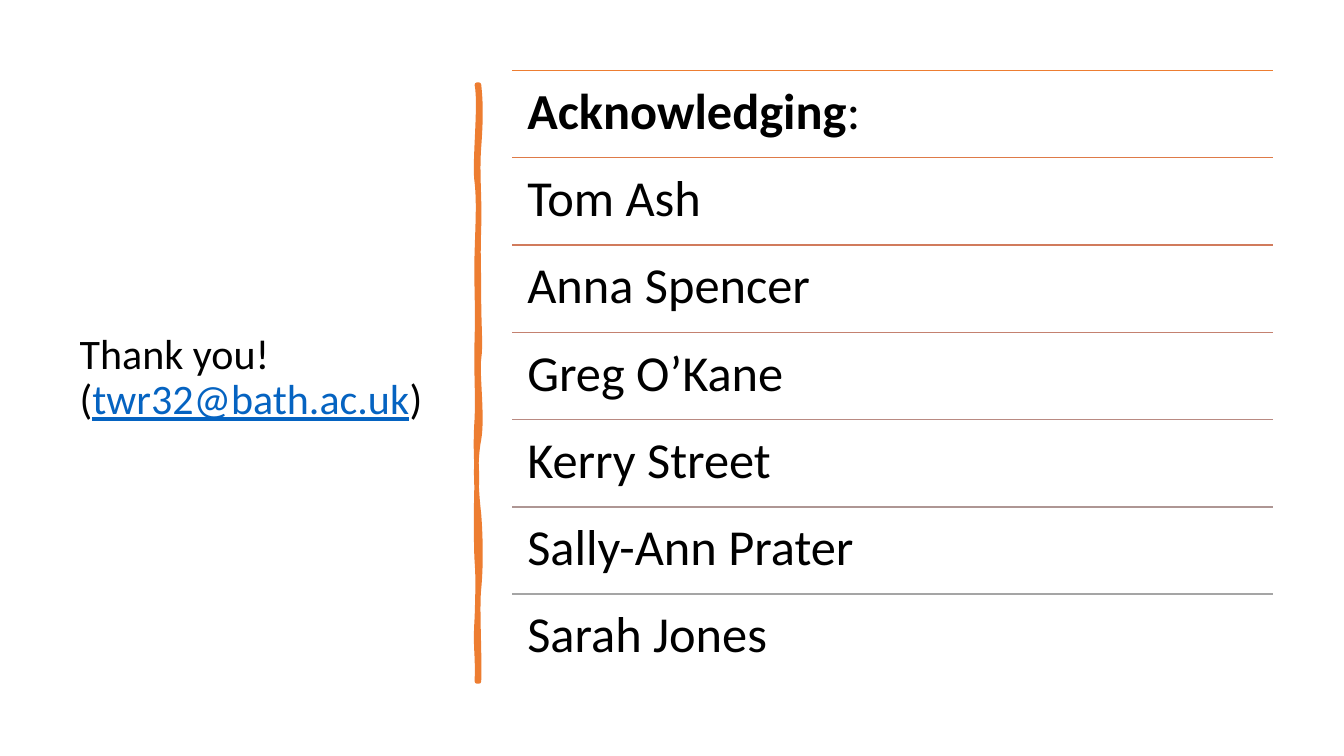
from lxml.etree import SubElement
from pptx import Presentation
from pptx.dml.color import RGBColor
from pptx.enum.shapes import MSO_CONNECTOR
from pptx.enum.text import MSO_ANCHOR, MSO_AUTO_SIZE, PP_ALIGN
from pptx.oxml.ns import qn
from pptx.util import Inches, Pt

COLORS = {"text": "000000", "link": "0563C1", "accent": "ED7D31"}
ROWS = [
    ("ED7D31", [("Acknowledging", True), (":", False)]),
    ("DE7A47", [("Tom Ash", False)]),
    ("D17B5C", [("Anna Spencer", False)]),
    ("C48170", [("Greg O’Kane", False)]),
    ("B98A82", [("Kerry Street", False)]),
    ("AE9694", [("Sally-Ann Prater", False)]),
    ("A5A5A5", [("Sarah Jones", False)]),
]
EDGE_CURVES = [
    [(4, 18), (4, 35), (2, 62)],
    [(0, 89), (3, 111), (2, 142)],
    [(1, 173), (2, 178), (2, 210)],
    [(2, 241), (4, 258), (2, 272)],
    [(0, 286), (6, 330), (2, 352)],
    [(-2, 373), (-1, 400), (2, 426)],
    [(4, 452), (4, 480), (2, 500)],
    [(0, 519), (3, 566), (2, 592)],
    [(1, 592), (0, 592), (0, 592)],
    [(1, 562), (-2, 560), (0, 529)],
    [(1, 499), (1, 486), (0, 473)],
    [(-1, 460), (-1, 411), (0, 393)],
    [(0, 375), (-2, 361), (0, 331)],
    [(1, 302), (-1, 289), (0, 251)],
    [(1, 214), (-1, 197), (0, 166)],
    [(1, 134), (2, 116), (0, 97)],
    [(-3, 79), (4, 20), (0, 0)],
    [(1, 0), (1, 0), (2, 0)],
]
BODY_CURVES = [
    [(2, 31), (-1, 41), (2, 68)],
    [(4, 95), (1, 113), (2, 124)],
    [(3, 136), (1, 171), (2, 210)],
    [(3, 249), (0, 259), (2, 278)],
    [(4, 297), (4, 313), (2, 346)],
    [(-1, 379), (2, 390), (2, 432)],
    [(2, 473), (1, 469), (2, 494)],
    [(3, 519), (1, 563), (2, 592)],
    [(1, 591), (0, 591), (0, 592)],
    [(-3, 565), (1, 548), (0, 529)],
    [(-1, 511), (2, 485), (0, 455)],
    [(-2, 426), (3, 416), (0, 387)],
    [(-3, 358), (4, 336), (0, 302)],
    [(-4, 267), (1, 241), (0, 216)],
    [(-2, 191), (-2, 175), (0, 154)],
    [(1, 132), (1, 101), (0, 80)],
    [(-2, 59), (2, 37), (0, 0)],
    [(1, 0), (1, 0), (2, 0)],
]


def rgb(value):
    return RGBColor.from_string(value)


def add_run(p, text, size, color=COLORS["text"], bold=False, underline=False):
    r = p.add_run()
    r.text = text
    r.font.name = "Calibri"
    r.font.size = Pt(size)
    r.font.bold = bold
    r.font.underline = underline
    r.font.color.rgb = rgb(color)


def add_point(parent, point):
    SubElement(parent, qn("a:pt"), x=str(point[0]), y=str(point[1]))


def add_outline(outlines, curves, **flags):
    outline = SubElement(outlines, qn("a:path"), w="2", h="592", **flags)
    add_point(SubElement(outline, qn("a:moveTo")), curves[-1][-1])
    for curve in curves:
        bezier = SubElement(outline, qn("a:cubicBezTo"))
        for point in curve:
            add_point(bezier, point)
    SubElement(outline, qn("a:close"))


def add_thanks(s, left, top, width, height):
    title = s.shapes.title
    title.left, title.top = Inches(left), Inches(top)
    title.width, title.height = Inches(width), Inches(height)
    tf = title.text_frame
    tf.word_wrap = True
    tf.auto_size = MSO_AUTO_SIZE.NONE
    tf.vertical_anchor = MSO_ANCHOR.MIDDLE
    p = tf.paragraphs[0]
    p.alignment = PP_ALIGN.LEFT
    p.line_spacing = 0.9
    add_run(p, "Thank you! (", 30)
    add_run(p, "twr32@bath.ac.uk", 30, COLORS["link"], underline=True)
    add_run(p, ")", 30)


def add_stroke(s, left, top, width, height):
    x, y = Inches(left), Inches(top)
    right, bottom = Inches(left + width), Inches(top + height)
    builder = s.shapes.build_freeform(x, y)
    builder.add_line_segments([(right, y), (right, bottom), (x, bottom)])
    sp = builder.convert_to_shape()
    outlines = sp._element.spPr.find(qn("a:custGeom")).find(qn("a:pathLst"))
    outlines.remove(outlines[0])
    add_outline(outlines, EDGE_CURVES, fill="none")
    add_outline(outlines, BODY_CURVES, stroke="0")
    sp.shadow.inherit = False
    sp.fill.solid()
    sp.fill.fore_color.rgb = rgb(COLORS["accent"])
    sp.line.color.rgb = rgb(COLORS["accent"])
    sp.line.width = Pt(3.25)
    SubElement(sp._element.spPr.find(qn("a:ln")), qn("a:round"))


def add_row(group, left, top, width, height, color, runs):
    x, y = Inches(left), Inches(top)
    rule = group.shapes.add_connector(MSO_CONNECTOR.STRAIGHT, x, y, Inches(left + width), y)
    rule.line.color.rgb = rgb(color)
    rule.line.width = Pt(1)
    SubElement(rule._element.spPr, qn("a:effectLst"))
    tf = group.shapes.add_textbox(x, y, Inches(width), Inches(height)).text_frame
    tf.word_wrap = True
    tf.margin_left = tf.margin_right = Inches(0.15)
    tf.margin_top = tf.margin_bottom = Inches(0.15)
    p = tf.paragraphs[0]
    p.line_spacing = 0.9
    for text, bold in runs:
        add_run(p, text, 36, bold=bold)


def add_acknowledgements(s, left, top, width, height):
    group = s.shapes.add_group_shape()
    pitch = height / len(ROWS)
    for i, (color, runs) in enumerate(ROWS):
        add_row(group, left, top + i * pitch, width, pitch, color, runs)


def main():
    prs = Presentation()
    prs.slide_width, prs.slide_height = Inches(13.33), Inches(7.5)
    s = prs.slides.add_slide(prs.slide_layouts[5])
    add_thanks(s, 0.69, 0.7, 3.74, 6.11)
    add_stroke(s, 4.73, 0.84, 0.02, 5.92)
    add_acknowledgements(s, 5.08, 0.7, 7.55, 6.06)
    prs.save("out.pptx")


if __name__ == "__main__":
    main()
